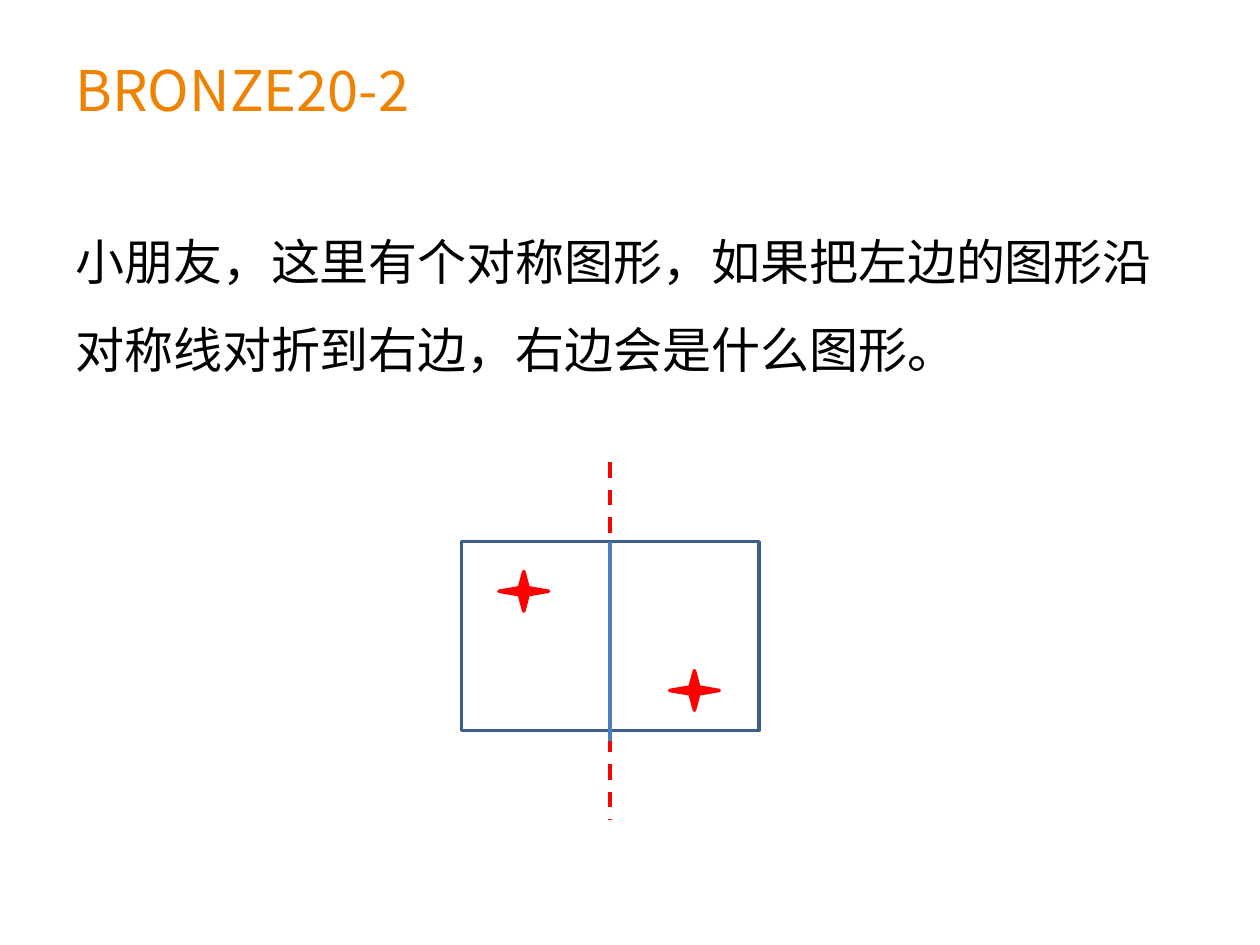
from lxml import etree
from pptx import Presentation
from pptx import util as u
from pptx.dml.color import RGBColor
from pptx.enum import dml, shapes, text
from pptx.oxml.ns import qn

Cm = u.Cm
FONT = "Noto Sans CJK SC"
ORANGE = RGBColor(0xEF, 0x82, 0x00)
BLACK = RGBColor(0x00, 0x00, 0x00)
RED = RGBColor(0xFF, 0x00, 0x00)
FRAME_BLUE = RGBColor(0x3A, 0x5F, 0x8C)
FOLD_BLUE = RGBColor(0x4B, 0x7E, 0xBC)


def write(sp, content, size, color, anchor, line_spacing=1.0, space_before=0):
    """Fill a shape with one left-aligned paragraph."""
    tf = sp.text_frame
    tf.word_wrap = True
    tf.auto_size = text.MSO_AUTO_SIZE.NONE
    tf.vertical_anchor = anchor
    p = tf.paragraphs[0]
    p.alignment = text.PP_ALIGN.LEFT
    p.line_spacing = line_spacing
    p.space_before = u.Pt(space_before)
    r = p.add_run()
    r.text = content
    r.font.name = FONT
    r.font.size = u.Pt(size)
    r.font.color.rgb = color
    ea = etree.SubElement(r.font._element, qn("a:ea"))
    ea.set("typeface", FONT)


def add_figure(s, kind, box, line, fill=None):
    """Add an outlined preset shape, filled only when a fill is given."""
    sp = s.shapes.add_shape(kind, *map(Cm, box))
    sp.shadow.inherit = False
    sp.line.color.rgb = line
    sp.line.width = u.Pt(2)
    if fill is None:
        sp.fill.background()
    else:
        sp.fill.solid()
        sp.fill.fore_color.rgb = fill
    return sp


def add_vertical(s, x, top, bottom, color, dash=None):
    """Add a vertical line without shadow."""
    line = s.shapes.add_connector(
        shapes.MSO_CONNECTOR.STRAIGHT, Cm(x), Cm(top), Cm(x), Cm(bottom))
    line.line.color.rgb = color
    line.line.width = u.Pt(2.25)
    if dash is not None:
        line.line.dash_style = dash
    etree.SubElement(line._element.spPr, qn("a:effectLst"))
    return line


def add_title(s, x, y, w, h):
    """Place and format the title placeholder."""
    sp = s.shapes.title
    sp.left, sp.top, sp.width, sp.height = map(Cm, (x, y, w, h))
    write(sp, "BRONZE20-2", 32, ORANGE, text.MSO_ANCHOR.MIDDLE)


def add_question(s, x, y, w, h):
    """Add the question text."""
    sp = s.shapes.add_textbox(*map(Cm, (x, y, w, h)))
    write(sp, "小朋友，这里有个对称图形，如果把左边的图形沿对称线对折到右边，右边会是什么图形。",
          28, BLACK, text.MSO_ANCHOR.TOP, line_spacing=1.5, space_before=5.6)


def add_fold_diagram(s, x, y, w, h):
    """Add the frame with its fold line, symmetry axis and two stars."""
    axis = x + w / 2
    frame = add_figure(s, shapes.MSO_SHAPE.RECTANGLE, (x, y, w, h), FRAME_BLUE)
    add_vertical(s, axis, y - 1.6, y + h + 1.81, RED, dml.MSO_LINE.DASH)
    for dx, dy in ((0.76, 0.6), (4.2, 2.6)):
        add_figure(s, shapes.MSO_SHAPE.STAR_4_POINT,
                   (x + dx, y + dy, 1, 0.8), RED, RED)
    fold = add_vertical(s, axis, y, y + h + 0.2, FOLD_BLUE)
    fold.begin_connect(frame, 0)


def main():
    """Build and save the slide."""
    prs = Presentation()
    prs.slide_width, prs.slide_height = Cm(25.4), Cm(19.05)
    s = prs.slides.add_slide(prs.slide_layouts[5])
    add_title(s, 1.27, 0.2, 22.86, 3.18)
    add_question(s, 1.27, 3.94, 22.86, 4.19)
    add_fold_diagram(s, 9.3, 10.92, 6, 3.81)
    prs.save("out.pptx")


if __name__ == "__main__":
    main()
